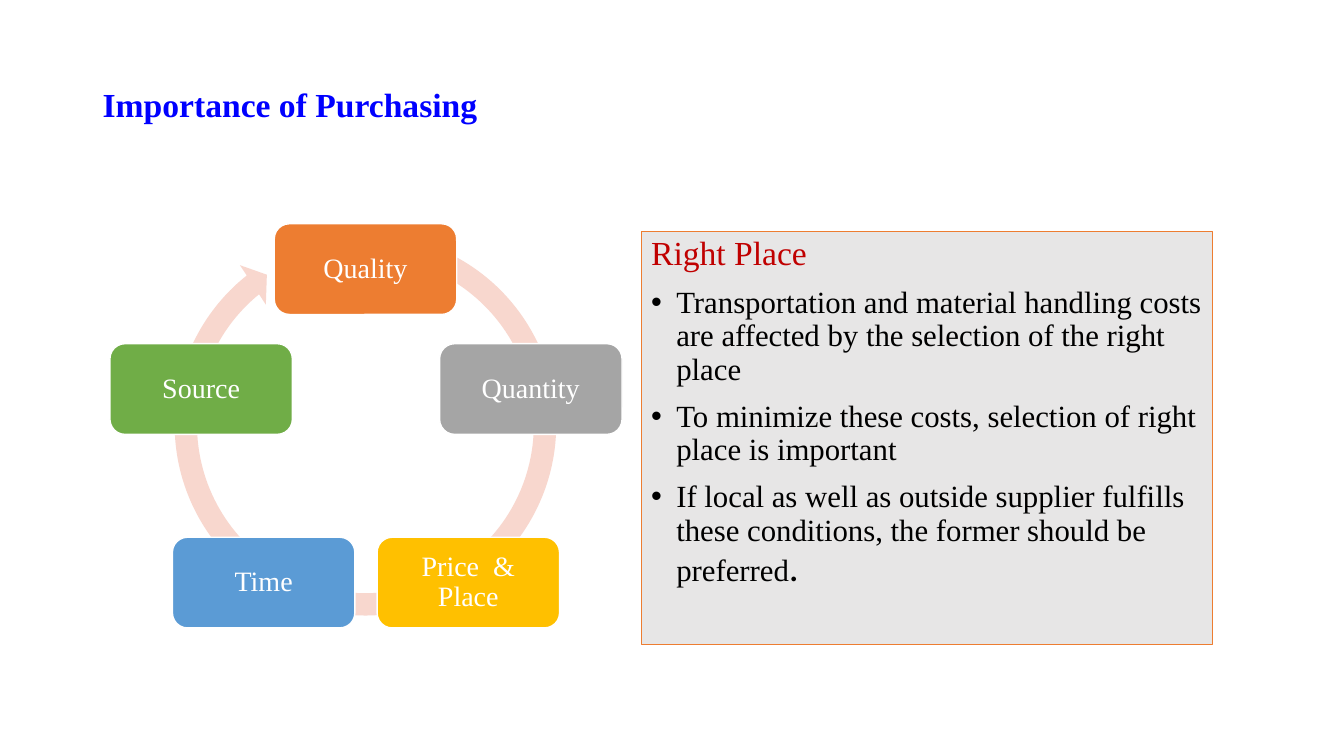
import math
from dataclasses import dataclass

from lxml import etree
from pptx import Presentation
from pptx import util as u
from pptx.dml.color import RGBColor
from pptx.enum import shapes, text
from pptx.oxml.ns import qn

PX = 9144  # 100 px to the inch
SERIF = "Times New Roman"
RING_X, RING_Y, RING_RADIUS = 363, 439, 172
CARD_W, CARD_H = 181, 90


@dataclass
class Card:
    label: str
    fill: str


CARDS = [
    Card("Quality", "ED7D31"),
    Card("Quantity", "A5A5A5"),
    Card("Price  & Place", "FFC000"),
    Card("Time", "5B9BD5"),
    Card("Source", "70AD47"),
]
POINTS = [
    "Transportation and material handling costs are affected by the selection of the right place",
    "To minimize these costs, selection of right place is important",
    "If local as well as outside supplier fulfills these conditions, the former should be preferred",
]


def rgb(color: str) -> RGBColor:
    return RGBColor.from_string(color)


def style_run(r, size: int, color: str, bold: bool = False, font: str = SERIF) -> None:
    r.font.name = font
    r.font.size = u.Pt(size)
    r.font.bold = bold
    r.font.color.rgb = rgb(color)


def add_filled(s, kind, x: int, y: int, w: int, h: int, fill: str,
               line: str = "", line_width: float = 1):
    sp = s.shapes.add_shape(kind, x * PX, y * PX, w * PX, h * PX)
    sp.shadow.inherit = False
    sp.fill.solid()
    sp.fill.fore_color.rgb = rgb(fill)
    if line:
        sp.line.color.rgb = rgb(line)
        sp.line.width = u.Pt(line_width)
    else:
        sp.line.fill.background()
    return sp


def add_bullet(p) -> None:
    pPr = p._p.get_or_add_pPr()
    pPr.set("marL", str(25 * PX))
    pPr.set("indent", str(-25 * PX))
    etree.SubElement(pPr, qn("a:buFont"), typeface="Arial")
    etree.SubElement(pPr, qn("a:buChar"), char="•")


def add_title(s) -> None:
    sp = s.shapes.add_textbox(92 * PX, 40 * PX, 567 * PX, 131 * PX)
    tf = sp.text_frame
    tf.word_wrap = True
    tf.vertical_anchor = text.MSO_ANCHOR.MIDDLE
    tf.text = "Importance of Purchasing"
    p = tf.paragraphs[0]
    p.line_spacing = 0.9
    style_run(p.runs[0], 24, "0000FF", bold=True)


def add_panel(s) -> None:
    sp = add_filled(s, shapes.MSO_SHAPE.RECTANGLE, 636, 230, 567, 409,
                    "E7E6E6", "ED7D31", 0.75)
    tf = sp.text_frame
    tf.word_wrap = True
    tf.vertical_anchor = text.MSO_ANCHOR.TOP
    tf.text = "\n".join(["Right Place", *POINTS])
    for i, p in enumerate(tf.paragraphs):
        p.alignment = text.PP_ALIGN.LEFT
        p.line_spacing = 0.9
        p.space_before = u.Pt(10)
        if i == 0:
            style_run(p.runs[0], 24, "C00000")
        else:
            add_bullet(p)
            style_run(p.runs[0], 22, "000000")
    r = tf.paragraphs[-1].add_run()
    r.text = "."
    style_run(r, 28, "000000", font="Calibri")


def add_ring(s) -> None:
    sp = add_filled(s, shapes.MSO_SHAPE.CIRCULAR_ARROW, 161, 220, 403, 403, "F8D7CE")
    for i, value in enumerate([0.055, 3.307, 138.723, 173.276, 0.058]):
        sp.adjustments[i] = value


def add_card(s, card: Card, angle: float) -> None:
    """Centre a card on the ring, with the angle clockwise from the top."""
    x = round(RING_X + RING_RADIUS * math.sin(angle) - CARD_W / 2)
    y = round(RING_Y - RING_RADIUS * math.cos(angle) - CARD_H / 2)
    sp = add_filled(s, shapes.MSO_SHAPE.ROUNDED_RECTANGLE, x, y, CARD_W, CARD_H,
                    card.fill, "FFFFFF")
    tf = sp.text_frame
    tf.word_wrap = True
    tf.vertical_anchor = text.MSO_ANCHOR.MIDDLE
    tf.margin_left = tf.margin_right = tf.margin_top = tf.margin_bottom = 8 * PX
    tf.text = card.label
    p = tf.paragraphs[0]
    p.alignment = text.PP_ALIGN.CENTER
    p.line_spacing = 0.9
    style_run(p.runs[0], 20, "FFFFFF")


def main() -> None:
    prs = Presentation()
    prs.slide_width, prs.slide_height = 1333 * PX, 750 * PX
    s = prs.slides.add_slide(prs.slide_layouts[6])
    add_title(s)
    add_panel(s)
    add_ring(s)
    for i, card in enumerate(CARDS):
        add_card(s, card, i * math.tau / len(CARDS))
    prs.save("out.pptx")


if __name__ == "__main__":
    main()
